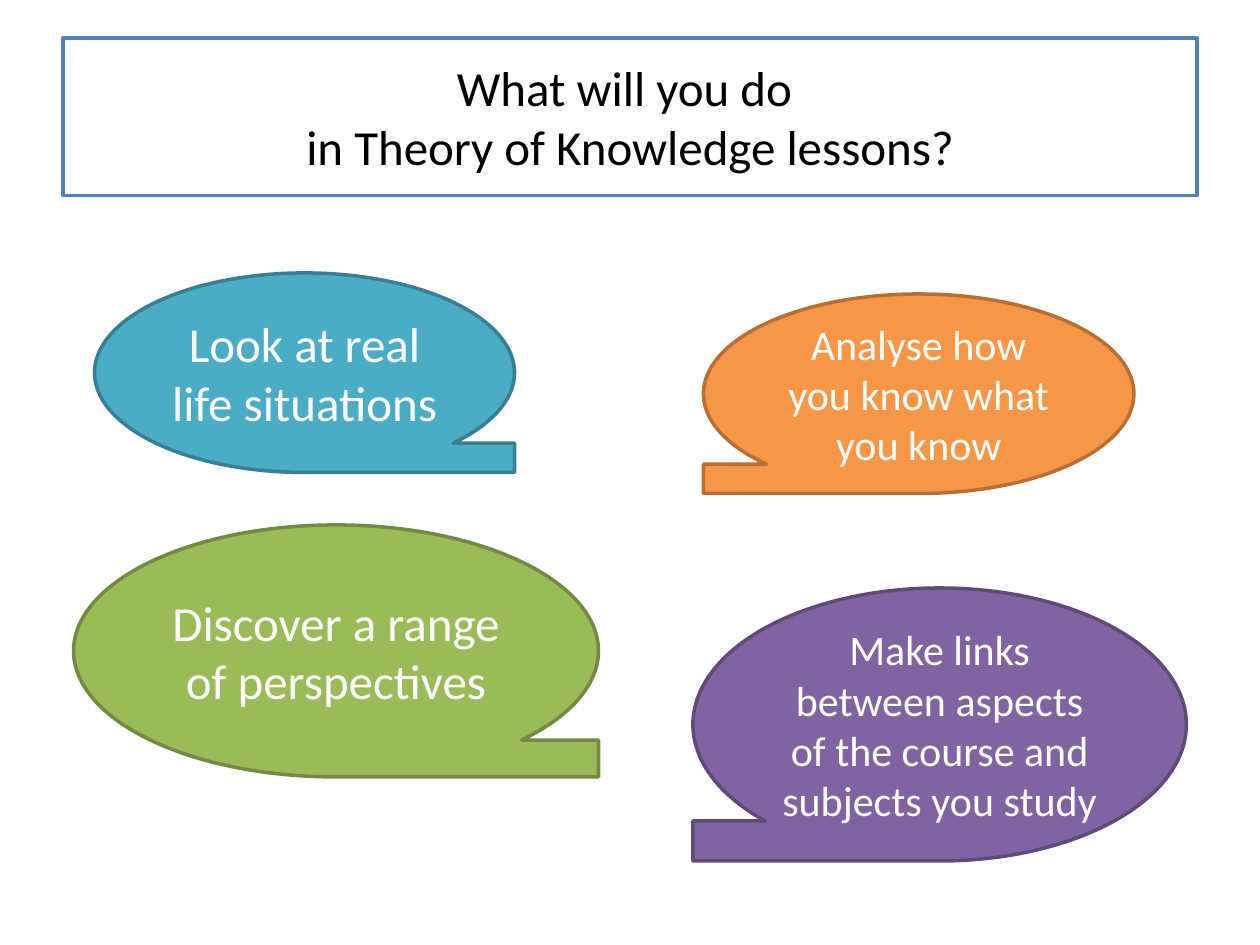
from pptx import Presentation
from pptx.dml.color import RGBColor
from pptx.enum.shapes import MSO_SHAPE as Preset
from pptx.enum.text import MSO_ANCHOR as Anchor, MSO_AUTO_SIZE as AutoSize, PP_ALIGN as Align
from pptx.util import Emu, Pt

PX = 9525
FONT = "Calibri"
WHITE = RGBColor(0xFF, 0xFF, 0xFF)
BLACK = RGBColor(0x00, 0x00, 0x00)
BLUE = RGBColor(0x4F, 0x81, 0xBD)
TEAL = RGBColor(0x4B, 0xAC, 0xC6)
TEAL_EDGE = RGBColor(0x37, 0x7F, 0x92)
ORANGE = RGBColor(0xF7, 0x96, 0x46)
ORANGE_EDGE = RGBColor(0xB7, 0x6F, 0x34)
GREEN = RGBColor(0x9B, 0xBB, 0x59)
GREEN_EDGE = RGBColor(0x73, 0x8A, 0x42)
PURPLE = RGBColor(0x80, 0x64, 0xA2)
PURPLE_EDGE = RGBColor(0x5F, 0x4A, 0x78)

QUESTION = ("What will you do ", "in Theory of Knowledge lessons?")
ACTIVITIES = [
    ("Look at real life situations", (72, 208, 320, 152), TEAL, TEAL_EDGE, 28, False),
    ("Analyse how you know what you know", (536, 224, 328, 152), ORANGE, ORANGE_EDGE, 24, True),
    ("Discover a range of perspectives", (56, 400, 400, 192), GREEN, GREEN_EDGE, 28, False),
    ("Make links between aspects of the course and subjects you study",
     (528, 448, 376, 208), PURPLE, PURPLE_EDGE, 24, True),
]


def px(length):
    """Turn pixels into EMU."""
    return Emu(length * PX)


def set_all(target, values):
    """Set each named attribute of the target."""
    for name, value in values.items():
        setattr(target, name, value)


def paint(box, fill, edge):
    """Give a box its fill and outline."""
    box.fill.solid()
    box.fill.fore_color.rgb = fill
    box.line.color.rgb = edge
    box.line.width = Pt(2)


def write(box, lines, size, color):
    """Write centred lines into a box."""
    frame = box.text_frame
    set_all(frame, {"word_wrap": True, "auto_size": AutoSize.NONE,
                    "vertical_anchor": Anchor.MIDDLE})
    paragraph = frame.paragraphs[0]
    paragraph.alignment = Align.CENTER
    for index, line in enumerate(lines):
        if index:
            paragraph.add_line_break()
        run = paragraph.add_run()
        run.text = line
        set_all(run.font, {"name": FONT, "size": Pt(size)})
        run.font.color.rgb = color


def add_question(slide):
    """Place the framed question in the title placeholder."""
    question = slide.shapes.title
    set_all(question, {"left": px(48), "top": px(29), "width": px(864), "height": px(120)})
    paint(question, WHITE, BLUE)
    write(question, QUESTION, 28, BLACK)


def add_bubble(slide, activity, place, fill, edge, size, flipped):
    """Add one speech bubble, its tail on the left when flipped."""
    bubble = slide.shapes.add_shape(
        Preset.FLOWCHART_SEQUENTIAL_ACCESS_STORAGE, *map(px, place))
    bubble.shadow.inherit = False
    if flipped:
        bubble._element.spPr.xfrm.set("flipH", "1")
    paint(bubble, fill, edge)
    write(bubble, [activity], size, WHITE)


def main():
    """Build and save the slide."""
    deck = Presentation()
    set_all(deck, {"slide_width": px(960), "slide_height": px(720)})
    slide = deck.slides.add_slide(deck.slide_layouts[5])
    add_question(slide)
    for activity in ACTIVITIES:
        add_bubble(slide, *activity)
    deck.save("out.pptx")


if __name__ == "__main__":
    main()
